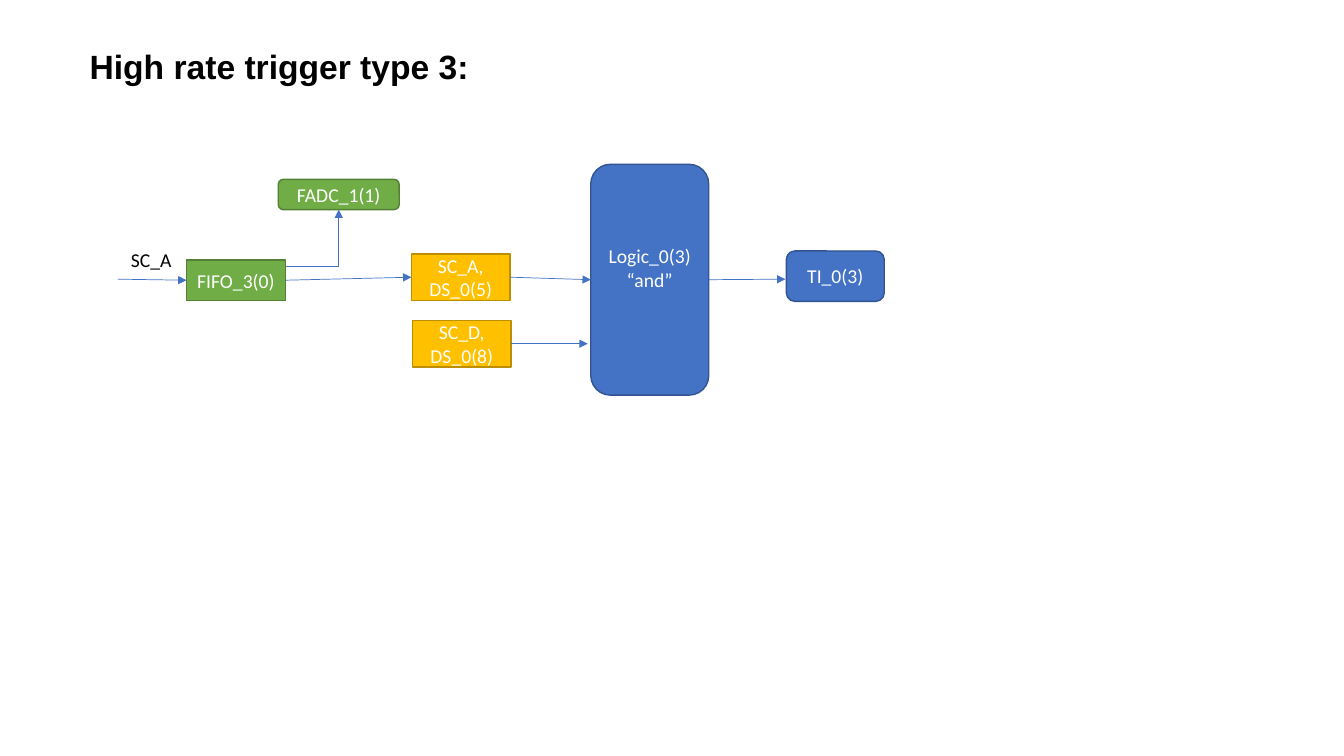
from lxml.etree import SubElement
from pptx import Presentation
from pptx.dml.color import RGBColor
from pptx.enum.shapes import MSO_CONNECTOR, MSO_SHAPE
from pptx.enum.text import MSO_ANCHOR, PP_ALIGN
from pptx.oxml.ns import qn
from pptx.util import Inches, Pt

COLORS = {
    "text": "000000",
    "node_text": "FFFFFF",
    "arrow": "4472C4",
    "blue": "4472C4",
    "blue_edge": "325491",
    "green": "70AD47",
    "green_edge": "538035",
    "amber": "FFC000",
    "amber_edge": "BD8E00",
}
TITLE_FONT = {"name": "Arial", "size": Pt(24), "bold": True}
BODY_FONT = {"name": "Calibri", "size": Pt(14)}
NODE_FRAME = {
    "word_wrap": True,
    "vertical_anchor": MSO_ANCHOR.MIDDLE,
    "margin_left": Inches(0.05),
    "margin_right": Inches(0.05),
}
TOP, LEFT, BOTTOM, RIGHT = range(4)

NODES = {
    "amber_a": (2.91, 0.89, 0.98, 0.46, "rect", "amber", ["SC_A,", "DS_0(5)"]),
    "amber_d": (2.92, 1.55, 0.98, 0.46, "rect", "amber", ["SC_D,", "DS_0(8)"]),
    "logic": (4.69, 0, 1.17, 2.29, "round", "blue", ["Logic_0(3)", "“and”"]),
    "trigger": (6.63, 0.86, 0.97, 0.5, "round", "blue", ["TI_0(3)"]),
    "fadc": (1.59, 0.15, 1.2, 0.3, "round", "green", ["FADC_1(1)"]),
    "fifo": (0.68, 0.95, 0.98, 0.4, "rect", "green", ["FIFO_3(0)"]),
}
OUTLINES = {"rect": MSO_SHAPE.RECTANGLE, "round": MSO_SHAPE.ROUNDED_RECTANGLE}
ARROWS = [
    ((0, 1.14), ("fifo", LEFT)),
    (("fifo", RIGHT), ("amber_a", LEFT)),
    (("amber_a", RIGHT), ("logic", LEFT)),
    (("amber_d", RIGHT), (4.66, 1.78)),
    (("logic", RIGHT), (6.62, 1.14)),
]


def apply(target, values):
    for name, value in values.items():
        setattr(target, name, value)


def rgb(name):
    return RGBColor.from_string(COLORS[name])


def write(frame, lines, font, color, align=PP_ALIGN.LEFT):
    for index, line in enumerate(lines):
        para = frame.add_paragraph() if index else frame.paragraphs[0]
        para.alignment = align
        span = para.add_run()
        span.text = line
        apply(span.font, font)
        span.font.color.rgb = rgb(color)


def add_label(page, box, text, font, wrap):
    frame = page.shapes.add_textbox(*map(Inches, box)).text_frame
    frame.word_wrap = wrap
    write(frame, [text], font, "text")


def add_node(page, box, outline, color, lines):
    node = page.shapes.add_shape(OUTLINES[outline], *map(Inches, box))
    node.shadow.inherit = False
    node.fill.solid()
    node.fill.fore_color.rgb = rgb(color)
    node.line.color.rgb = rgb(color + "_edge")
    node.line.width = Pt(1)
    apply(node.text_frame, NODE_FRAME)
    write(node.text_frame, lines, BODY_FONT, "node_text", PP_ALIGN.CENTER)
    return node


def add_arrow(page, start, end, kind=MSO_CONNECTOR.STRAIGHT):
    arrow = page.shapes.add_connector(kind, *map(Inches, (*start, *end)))
    arrow.line.color.rgb = rgb("arrow")
    arrow.line.width = Pt(0.5)
    SubElement(arrow.line._get_or_add_ln(), qn("a:tailEnd"), type="triangle")
    SubElement(arrow._element.spPr, qn("a:effectLst"))
    return arrow


def add_diagram(page, box):
    left, top = box[:2]

    def place(point):
        return left + point[0], top + point[1]

    elbow = add_arrow(page, place((1.59, 1.01)), place((2.19, 0.45)), MSO_CONNECTOR.ELBOW)
    elbow._element.spPr.find(qn("a:prstGeom")).set("prst", "bentConnector2")

    nodes = {}
    for name, (x, y, width, height, outline, color, lines) in NODES.items():
        nodes[name] = add_node(page, (*place((x, y)), width, height), outline, color, lines)
    nodes["logic"].text_frame.margin_bottom = Inches(0.29)

    def locate(anchor):
        if anchor[0] not in NODES:
            return place(anchor)
        name, side = anchor
        x, y, width, height = NODES[name][:4]
        return place((x + (width if side == RIGHT else 0), y + height / 2))

    for start, end in ARROWS:
        arrow = add_arrow(page, locate(start), locate(end))
        if start[0] in nodes:
            arrow.begin_connect(nodes[start[0]], start[1])
        if end[0] in nodes:
            arrow.end_connect(nodes[end[0]], end[1])

    add_label(page, (*place((0.03, 0.78)), 0.62, 0.34), "SC_A", BODY_FONT, False)


def main():
    deck = Presentation()
    apply(deck, {"slide_width": Inches(13.33), "slide_height": Inches(7.5)})
    page = deck.slides.add_slide(deck.slide_layouts[6])
    add_label(page, (0.79, 0.41, 12.18, 0.75), "High rate trigger type 3:", TITLE_FONT, True)
    add_diagram(page, (1.17, 1.63, 7.6, 2.29))
    deck.save("out.pptx")


if __name__ == "__main__":
    main()
